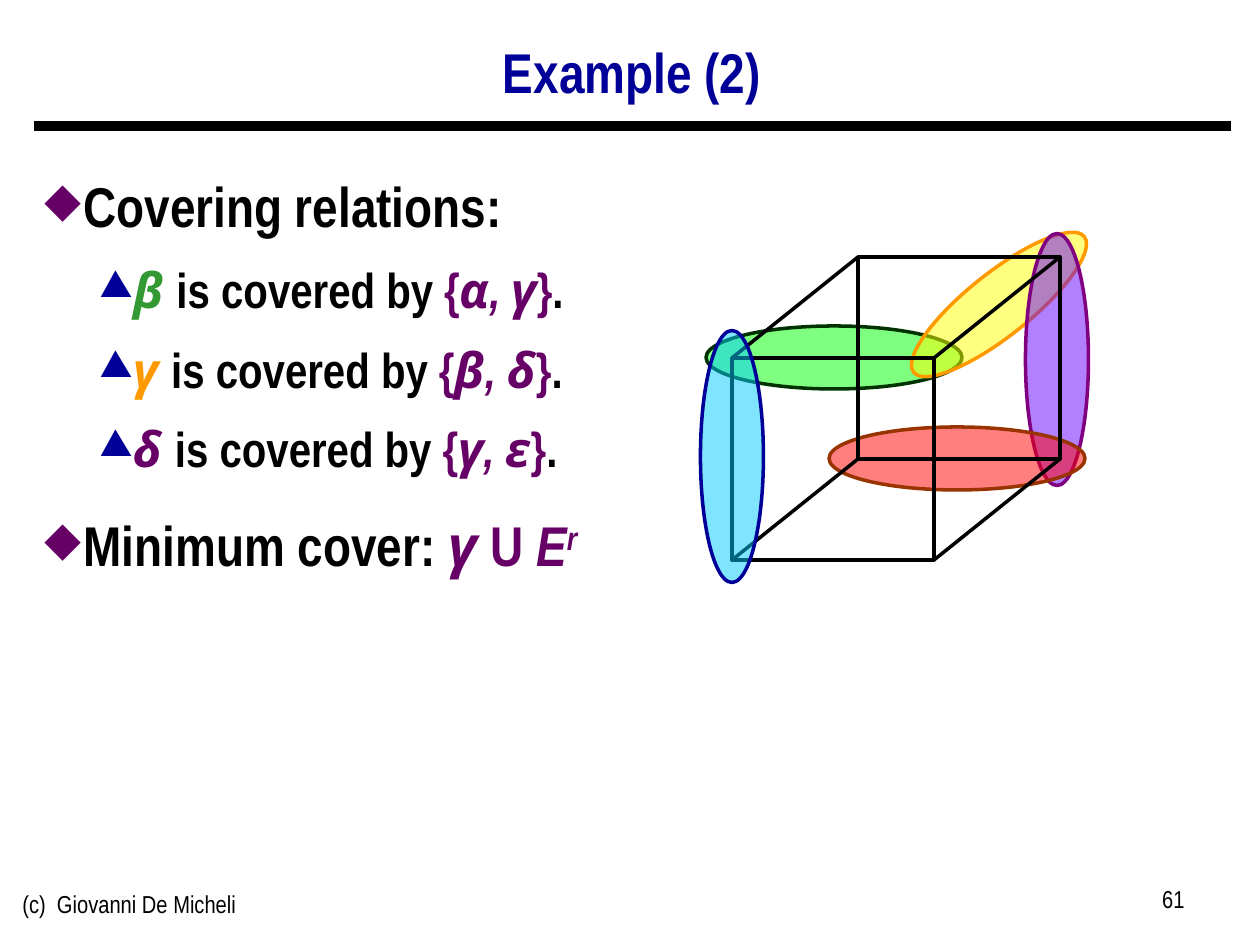
from lxml import etree
from pptx import Presentation
from pptx import util as u
from pptx.dml.color import RGBColor
from pptx.enum import shapes, text
from pptx.oxml import ns

SCALE = 914400 / 126
NARROW, GREEK = "Arial Narrow", "Open Sans"
BLACK, NAVY, PURPLE, GREEN, ORANGE = "000000", "000099", "660066", "339933", "FF9900"


def px(*lengths):
    return [u.Emu(round(length * SCALE)) for length in lengths]


def paint(target, color):
    if hasattr(target, "solid"):
        target.solid()
        target = target.fore_color
    target.rgb = RGBColor.from_string(color)


deck = Presentation()
deck.slide_width, deck.slide_height = px(1260, 945)
page = deck.slides.add_slide(deck.slide_layouts[6])

rule = page.shapes.add_connector(shapes.MSO_CONNECTOR.STRAIGHT, *px(34, 126, 1231, 126))
rule.line.width = u.Pt(6)
paint(rule.line.fill, BLACK)
etree.SubElement(rule._element.spPr, ns.qn("a:effectLst"))

labels = [
    ("(c)  Giovanni De Micheli", (10, 883, 400, 66), BLACK,
     {"size": u.Pt(14), "bold": False}, {"alignment": text.PP_ALIGN.LEFT}, text.MSO_ANCHOR.TOP),
    ("61", (903, 878, 294, 66), BLACK,
     {"size": u.Pt(14), "bold": False}, {"alignment": text.PP_ALIGN.RIGHT}, text.MSO_ANCHOR.TOP),
    ("Example (2)", (33, 28, 1198, 94), NAVY, {"size": u.Pt(32), "bold": True},
     {"alignment": text.PP_ALIGN.CENTER, "line_spacing": 0.9}, text.MSO_ANCHOR.MIDDLE),
]
for words, place, color, font_format, para_format, anchor in labels:
    box = page.shapes.add_textbox(*px(*place))
    box.text_frame.word_wrap = True
    box.text_frame.vertical_anchor = anchor
    para = box.text_frame.paragraphs[0]
    for name, value in para_format.items():
        setattr(para, name, value)
    span = para.add_run()
    span.text = words
    span.font.name = NARROW
    paint(span.font.color, color)
    for name, value in font_format.items():
        setattr(span.font, name, value)

levels = [
    {"size": 32, "spacing": 1.25, "margin": 39, "indent": -39,
     "bullet": "◆", "color": PURPLE, "percent": 85},
    {"size": 28, "spacing": 1.1, "margin": 87, "indent": -32,
     "bullet": "▲", "color": NAVY, "percent": 75},
]
relations = [("β", " ", GREEN, "α", "γ"), ("γ", " ", ORANGE, "β", "δ"), ("δ", " ", PURPLE, "γ", "ε")]
lines = [(0, [("Covering relations:", NARROW, BLACK, False)])]
for covered, gap, color, first, second in relations:
    lines.append((1, [
        (covered + gap, GREEK, color, True),
        ("is covered by ", NARROW, BLACK, False),
        ("{", NARROW, PURPLE, False),
        (first, GREEK, PURPLE, True),
        (", ", NARROW, PURPLE, True),
        (second, GREEK, PURPLE, True),
        ("}", NARROW, PURPLE, False),
        (".", NARROW, BLACK, False),
    ]))
lines.append((0, [
    ("Minimum cover: ", NARROW, BLACK, False),
    ("γ", GREEK, PURPLE, True),
    (" U ", NARROW, PURPLE, False),
    ("E", NARROW, PURPLE, True),
    ("r", NARROW, PURPLE, True),
]))

body = page.shapes.add_textbox(*px(32, 149, 1198, 717))
body.text_frame.word_wrap = True
for index, (depth, spans) in enumerate(lines):
    level = levels[depth]
    para = body.text_frame.paragraphs[0] if index == 0 else body.text_frame.add_paragraph()
    para.level = depth
    para.line_spacing = level["spacing"]
    margin, indent = px(level["margin"], level["indent"])
    settings = para._p.get_or_add_pPr()
    settings.set("marL", str(margin))
    settings.set("indent", str(indent))
    before = etree.SubElement(settings, ns.qn("a:spcBef"))
    etree.SubElement(before, ns.qn("a:spcPct"), val="30000")
    bullet_color = etree.SubElement(settings, ns.qn("a:buClr"))
    etree.SubElement(bullet_color, ns.qn("a:srgbClr"), val=level["color"])
    etree.SubElement(settings, ns.qn("a:buSzPct"), val=str(level["percent"] * 1000))
    etree.SubElement(settings, ns.qn("a:buChar"), char=level["bullet"])
    for words, face, color, italic in spans:
        span = para.add_run()
        span.text = words
        font_format = {"name": face, "size": u.Pt(level["size"]), "bold": True, "italic": italic}
        for name, value in font_format.items():
            setattr(span.font, name, value)
        paint(span.font.color, color)
span._r.get_or_add_rPr().set("baseline", "30000")

ELLIPSE, SQUARE = shapes.MSO_SHAPE.OVAL, shapes.MSO_SHAPE.RECTANGLE
SIDE, FRONT, BACK = 202, (732, 358), (858, 257)
figures = [
    (ELLIPSE, (706, 326, 256, 63), 0, "00FF00", "003300"),
    (ELLIPSE, (890, 273, 218, 63), 321.5, "FFFF00", "FF9900"),
    (ELLIPSE, (931, 328, 252, 63), 270, "6600FF", "800080"),
    (ELLIPSE, (829, 427, 256, 63), 0, "FF0000", "993300"),
    (SQUARE, (*FRONT, SIDE, SIDE), 0, None, BLACK),
    (SQUARE, (*BACK, SIDE, SIDE), 0, None, BLACK),
    (ELLIPSE, (606, 425, 252, 63), 270, "00CCFF", "000099"),
]
for kind, place, turn, fill, outline in figures:
    if fill == "00CCFF":
        for across, down in [(0, 0), (SIDE, 0), (SIDE, SIDE), (0, SIDE)]:
            ends = px(FRONT[0] + across, FRONT[1] + down, BACK[0] + across, BACK[1] + down)
            edge = page.shapes.add_connector(shapes.MSO_CONNECTOR.STRAIGHT, *ends)
            edge.line.width = u.Pt(2)
            paint(edge.line.fill, BLACK)
            etree.SubElement(edge._element.spPr, ns.qn("a:effectLst"))
    figure = page.shapes.add_shape(kind, *px(*place))
    figure.shadow.inherit = False
    figure.rotation = turn
    figure.line.width = u.Pt(2)
    paint(figure.line.fill, outline)
    if fill:
        paint(figure.fill, fill)
        tint = figure._element.spPr.find(ns.qn("a:solidFill"))[0]
        etree.SubElement(tint, ns.qn("a:alpha"), val="50000")
    else:
        figure.fill.background()

deck.save("out.pptx")
